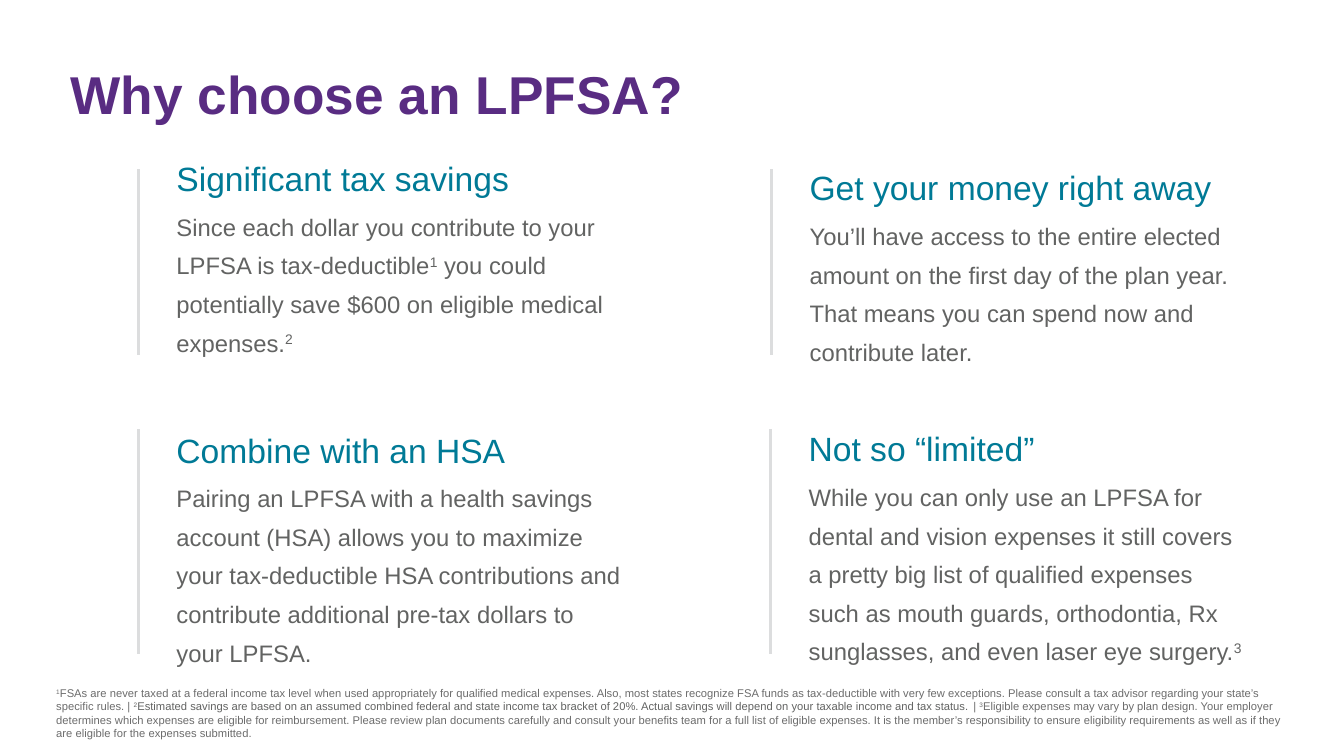
from copy import deepcopy

from pptx import Presentation
from pptx.dml.color import RGBColor
from pptx.enum.shapes import MSO_CONNECTOR as Connector
from pptx.enum.text import MSO_ANCHOR as Anchor, MSO_AUTO_SIZE as AutoSize, PP_ALIGN as Align
from pptx.oxml.ns import qn
from pptx.oxml.xmlchemy import OxmlElement
from pptx.util import Inches, Pt

PURPLE = RGBColor(0x59, 0x2C, 0x82)
TEAL = RGBColor(0x00, 0x7A, 0x96)
BODY_GRAY = RGBColor(0x62, 0x63, 0x62)
NOTE_GRAY = RGBColor(0x6C, 0x6C, 0x6C)
RULE_GRAY = RGBColor(0xDC, 0xDD, 0xDE)

# Text between carets is superscript; \v is a line break.
# Each benefit: heading, paragraphs, box (left, top, width, height), anchor.
BENEFITS = [
    ("Significant tax savings",
     ["Since each dollar you contribute to your \vLPFSA is tax-deductible^1^ you could "
      "potentially save $600 on eligible medical expenses.^2^"],
     (1.65, 1.41, 4.94, 2.18), Anchor.BOTTOM),
    ("Get your money right away",
     ["You’ll have access to the entire elected amount on the first day of the plan year. "
      "\vThat means you can spend now and contribute later."],
     (7.93, 1.57, 4.43, 2.19), Anchor.TOP),
    ("Combine with an HSA",
     ["Pairing an LPFSA with a health savings account (HSA) allows you to maximize your "
      "tax-deductible HSA contributions and contribute additional pre-tax dollars to "
      "your LPFSA."],
     (1.65, 4.17, 4.65, 2.47), Anchor.TOP),
    ("Not so “limited”",
     ["While you can only use an LPFSA for dental and vision expenses it still covers "
      "\va pretty big list of qualified expenses",
      "such as mouth guards, orthodontia, Rx sunglasses, and even laser eye surgery.^3^"],
     (7.92, 4.16, 4.64, 2.5), Anchor.TOP),
]
RULE_SPANS = [(1.68, 3.52), (4.26, 6.49)]
RULE_GAP = 0.28

FOOTNOTES = [
    ("^1^FSAs are never taxed at a federal income tax level when used appropriately for "
     "qualified medical expenses. Also, most states recognize FSA funds as tax-deductible "
     "with very few exceptions. Please consult a tax advisor regarding your state’s "
     "specific rules. | ", NOTE_GRAY),
    ("^2^Estimated savings are based on an assumed combined federal and state income tax "
     "bracket of 20%. Actual savings will depend on your taxable income and tax status. ",
     BODY_GRAY),
    ("| ^3^Eligible expenses may vary by plan design. Your employer determines which "
     "expenses are eligible for reimbursement. Please review plan documents carefully and "
     "consult your benefits team for a full list of eligible expenses. It is the member’s "
     "responsibility to ensure eligibility requirements as well as if they are eligible "
     "for the expenses submitted.", NOTE_GRAY),
]


class SlideBuilder:
    font_name = "Arial"

    def __init__(self, page):
        self.page = page

    def place(self, box, position, anchor=Anchor.TOP):
        box.left, box.top, box.width, box.height = map(Inches, position)
        frame = box.text_frame
        frame.word_wrap = True
        frame.auto_size = AutoSize.NONE
        frame.vertical_anchor = anchor
        return frame

    def style(self, span, size, color, bold=False):
        font = span.font
        font.name, font.size, font.bold = self.font_name, Pt(size), bold
        font.color.rgb = color

    def layout(self, para, spacing, after):
        properties = para._p.get_or_add_pPr()
        properties.set("marL", "0")
        properties.set("indent", "0")
        properties.append(OxmlElement("a:buNone"))
        para.alignment = Align.LEFT
        para.line_spacing = spacing
        para.space_before, para.space_after = Pt(0), Pt(after)

    def add_spans(self, para, text, size, color):
        for index, piece in enumerate(text.split("^")):
            for number, line in enumerate(piece.split("\v")):
                if number:
                    para.add_line_break()
                    # A break keeps the size of the text before it
                    line_break = para._p.findall(qn("a:br"))[-1]
                    line_break.append(deepcopy(para.runs[-1].font._element))
                if line:
                    span = para.add_run()
                    span.text = line
                    self.style(span, size, color)
                    if index % 2:
                        span.font._element.set("baseline", "30000")

    def title(self, text, position):
        frame = self.place(self.page.shapes.title, position)
        frame.margin_top = frame.margin_bottom = Inches(0.1)
        frame.text = text
        para = frame.paragraphs[0]
        self.layout(para, Pt(60.8), 0)
        self.style(para.runs[0], 38, PURPLE, bold=True)

    def benefit(self, box, heading, paragraphs, position, anchor):
        frame = self.place(box, position, anchor)
        frame.text = heading
        self.layout(frame.paragraphs[0], 1.1, 3)
        self.style(frame.paragraphs[0].runs[0], 24, TEAL)
        for text in paragraphs:
            para = frame.add_paragraph()
            self.layout(para, 1.35, 3 if anchor == Anchor.BOTTOM else 0)
            self.add_spans(para, text, 17, BODY_GRAY)

    def rule(self, x, top, bottom):
        line = self.page.shapes.add_connector(
            Connector.STRAIGHT, Inches(x), Inches(top), Inches(x), Inches(bottom))
        line.line.color.rgb = RULE_GRAY
        line.line.width = Pt(2)
        line._element.spPr.append(OxmlElement("a:effectLst"))

    def footnote(self, parts, position):
        box = self.page.shapes.add_textbox(*map(Inches, position))
        para = self.place(box, position).paragraphs[0]
        self.layout(para, 1.0, 1.3)
        for text, color in parts:
            self.add_spans(para, text, 8, color)


def main():
    deck = Presentation()
    deck.slide_width, deck.slide_height = Inches(13.33), Inches(7.5)
    page = deck.slides.add_slide(deck.slide_layouts.get_by_name("Comparison"))
    builder = SlideBuilder(page)

    # Title
    builder.title("Why choose an LPFSA?", (0.6, 0.3, 7.98, 1))

    # Benefits, two to a row, each with a rule on its left
    bodies = list(page.placeholders)[1:]
    for index, (body, benefit) in enumerate(zip(bodies, BENEFITS)):
        builder.benefit(body, *benefit)
        left = benefit[2][0]
        builder.rule(left - RULE_GAP, *RULE_SPANS[index // 2])

    # Footnotes
    builder.footnote(FOOTNOTES, (0.46, 6.76, 12.5, 0.68))

    deck.save("out.pptx")


if __name__ == "__main__":
    main()
